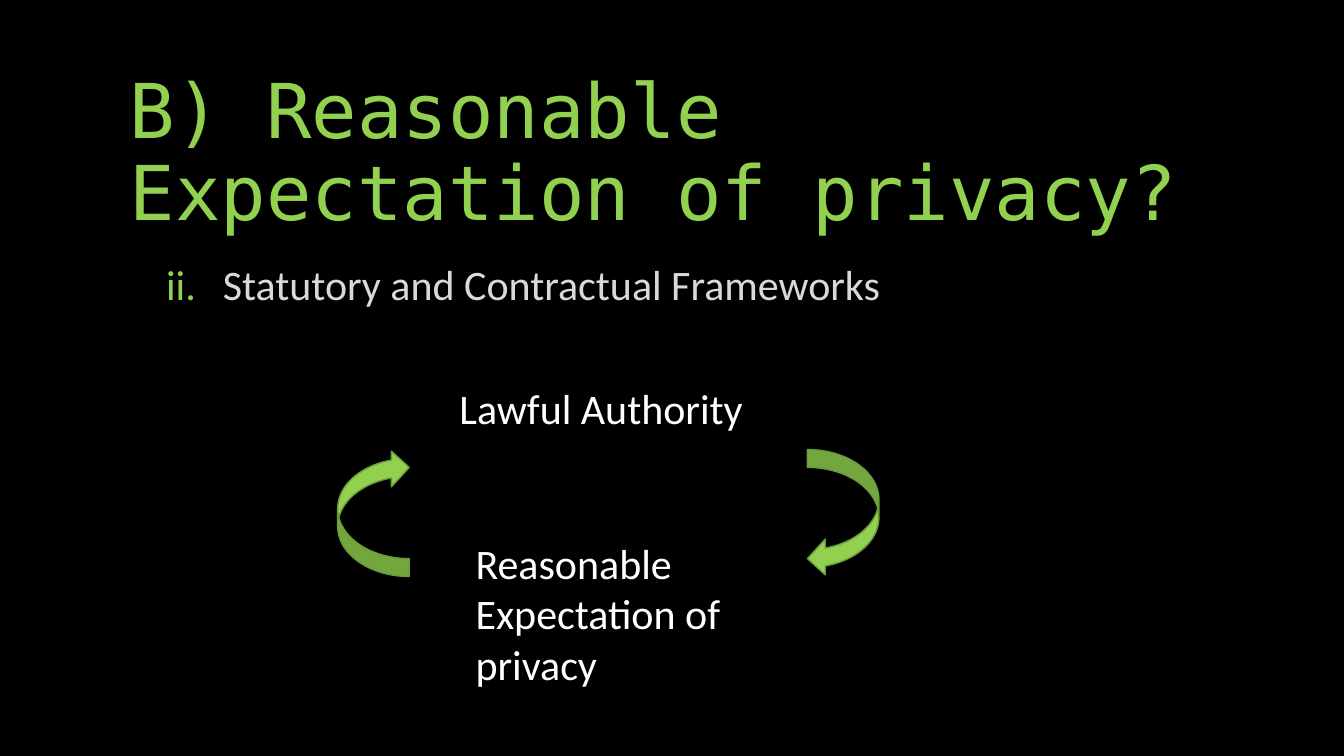
"""Build the slide on reasonable expectation of privacy and lawful authority."""
import pptx
import pptx.dml.color
import pptx.enum.shapes
import pptx.enum.text
import pptx.oxml
import pptx.oxml.ns
import pptx.util

Pt = pptx.util.Pt
RGBColor = pptx.dml.color.RGBColor
MSO_ANCHOR = pptx.enum.text.MSO_ANCHOR

BLACK = RGBColor(0x00, 0x00, 0x00)
WHITE = RGBColor(0xFF, 0xFF, 0xFF)
GREY = RGBColor(0xD9, 0xD9, 0xD9)
GREEN = RGBColor(0x92, 0xD0, 0x50)
DARK_GREEN = RGBColor(0x6C, 0x9A, 0x3B)


def add_text(box, words, color, size=30, font="Calibri", anchor=MSO_ANCHOR.TOP):
    frame = slide.shapes.add_textbox(*map(Pt, box)).text_frame
    frame.word_wrap = True
    frame.vertical_anchor = anchor
    paragraph = frame.paragraphs[0]
    paragraph.text = words
    paragraph.font.name = font
    paragraph.font.size = Pt(size)
    paragraph.font.color.rgb = color
    return paragraph


presentation = pptx.Presentation()
presentation.slide_width = Pt(960)
presentation.slide_height = Pt(540)
slide = presentation.slides.add_slide(presentation.slide_layouts[6])
slide.background.fill.solid()
slide.background.fill.fore_color.rgb = BLACK

title = add_text((85.7, 43.2, 788.4, 129.6), "B) Reasonable Expectation of privacy?",
                 GREEN, 54, "DejaVu Sans Mono", MSO_ANCHOR.BOTTOM)
title.line_spacing = 0.9

frameworks = add_text((111.6, 185, 720, 45.4), "Statutory and Contractual Frameworks", GREY)
frameworks.line_spacing = 0.9
frameworks.space_before = Pt(18)
numbering = frameworks._p.get_or_add_pPr()
numbering.set("marL", str(Pt(40.5)))
numbering.set("indent", str(-Pt(40.5)))
namespace = pptx.oxml.ns.nsdecls("a")
for position, bullet in enumerate((
    f'<a:buClr {namespace}><a:srgbClr val="{GREEN}"/></a:buClr>',
    f'<a:buFont {namespace} typeface="+mj-lt"/>',
    f'<a:buAutoNum {namespace} type="romanLcPeriod" startAt="2"/>',
)):
    numbering.insert(2 + position, pptx.oxml.parse_xml(bullet))

add_text((321.1, 270, 254.9, 43.9), "Lawful Authority", WHITE)
add_text((332.6, 380.2, 214.6, 116.6), "Reasonable Expectation of privacy", WHITE)

for left, rotation in ((576.7, 0), (241.2, 180)):
    cycle_arrow = slide.shapes.add_shape(
        pptx.enum.shapes.MSO_SHAPE.CURVED_LEFT_ARROW,
        Pt(left), Pt(321.1), Pt(51.1), Pt(90.7))
    cycle_arrow.rotation = rotation
    cycle_arrow.shadow.inherit = False
    cycle_arrow.fill.solid()
    cycle_arrow.fill.fore_color.rgb = GREEN
    cycle_arrow.line.color.rgb = DARK_GREEN
    cycle_arrow.line.width = Pt(1)

presentation.save("out.pptx")
